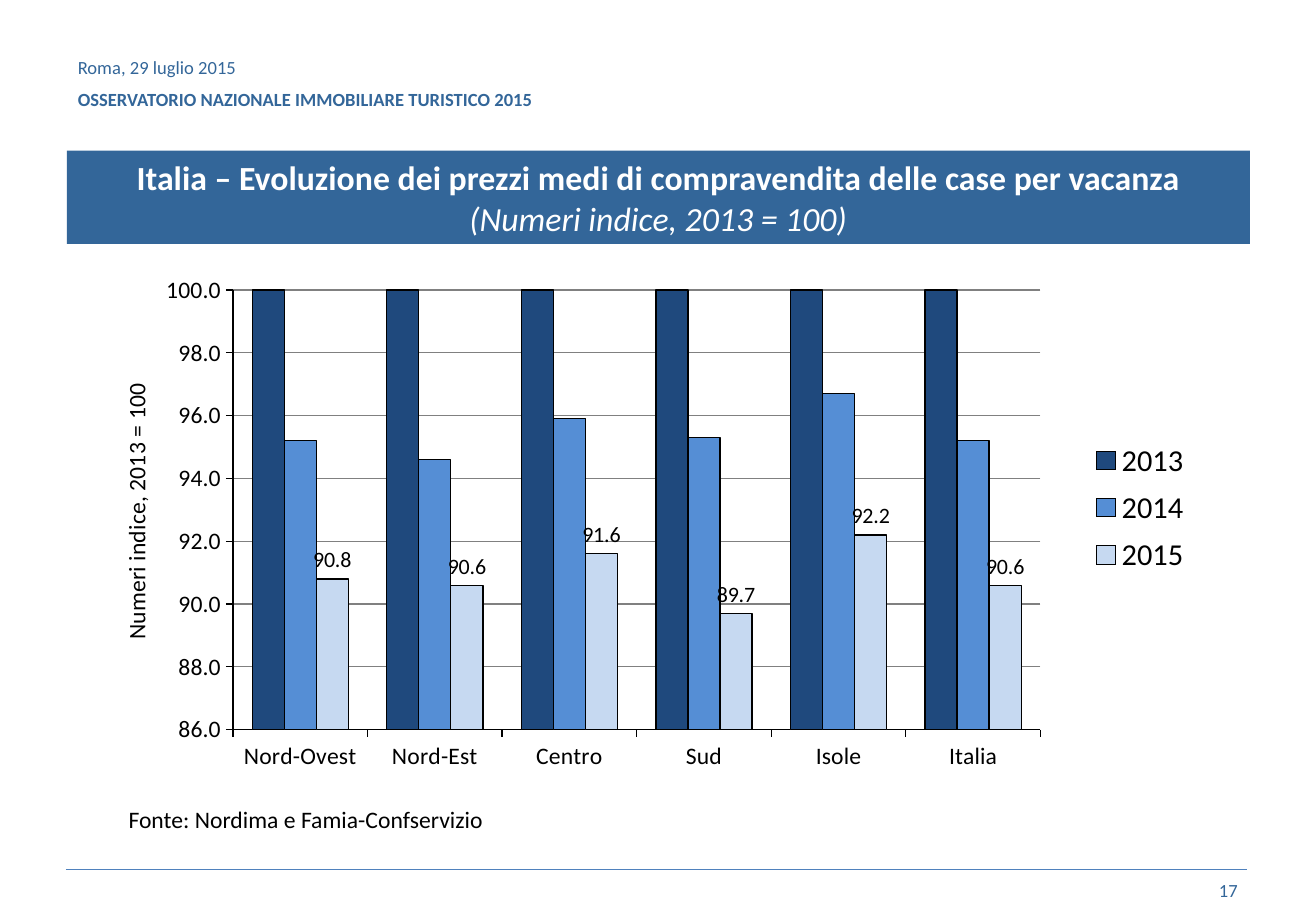
import pptx
import pptx.chart.data
import pptx.dml.color
import pptx.enum.chart
import pptx.enum.shapes
import pptx.enum.text
import pptx.oxml
import pptx.oxml.ns
import pptx.util

Pt = pptx.util.Pt
qn = pptx.oxml.ns.qn
ALIGN = pptx.enum.text.PP_ALIGN
CHART = pptx.enum.chart

BLUE = "336699"
BLACK = "000000"
WHITE = "FFFFFF"
AREAS = ["Nord-Ovest", "Nord-Est", "Centro", "Sud", "Isole", "Italia"]
PRICE_INDEX = [
    ("2013", "1F497D", [100] * 6),
    ("2014", "558ED5", [95.2, 94.6, 95.9, 95.3, 96.7, 95.2]),
    ("2015", "C6D9F1", [90.8, 90.6, 91.6, 89.7, 92.2, 90.6]),
]


def rgb(value):
    return pptx.dml.color.RGBColor.from_string(value)


def set_line(line, color, width):
    line.color.rgb = rgb(color)
    line.width = Pt(width)


def set_layout(element, inner=False, **fractions):
    """Place a chart part by fractions of the chart area."""
    for old in element.findall(qn("c:layout")):
        element.remove(old)
    modes = {key + "Mode": "edge" for key in fractions if key in "xy"}
    settings = {"layoutTarget": "inner"} if inner else {}
    settings.update(modes)
    settings.update(fractions)
    items = "".join(f'<c:{key} val="{val}"/>' for key, val in settings.items())
    layout = pptx.oxml.parse_xml(
        f'<c:layout {pptx.oxml.ns.nsdecls("c")}><c:manualLayout>{items}'
        "</c:manualLayout></c:layout>")
    overlay = element.find(qn("c:overlay"))
    if overlay is None:
        element.insert(0, layout)
    else:
        overlay.addprevious(layout)


class SlideBuilder:
    def __init__(self, slide, font="Calibri"):
        self.s = slide
        self.font = font

    def style(self, font, size, color=BLACK, bold=False):
        font.name = self.font
        font.size = Pt(size)
        font.color.rgb = rgb(color)
        font.bold = bold

    def rule(self, x1, y1, x2, y2, color, width):
        line = self.s.shapes.add_connector(
            pptx.enum.shapes.MSO_CONNECTOR.STRAIGHT, Pt(x1), Pt(y1), Pt(x2), Pt(y2))
        set_line(line.line, color, width)
        pptx.oxml.ns  # namespace helpers
        line._element.spPr.append(
            pptx.oxml.parse_xml(f'<a:effectLst {pptx.oxml.ns.nsdecls("a")}/>'))

    def text(self, box, lines, size, color=BLACK, align=ALIGN.LEFT, middle=True):
        """Add a text box; lines holds (text, bold) pairs."""
        sp = self.s.shapes.add_textbox(*map(Pt, box))
        tf = sp.text_frame
        tf.word_wrap = True
        if middle:
            tf.vertical_anchor = pptx.enum.text.MSO_ANCHOR.MIDDLE
        for i, (content, bold) in enumerate(lines):
            p = tf.add_paragraph() if i else tf.paragraphs[0]
            p.text = content
            p.alignment = align
            if i:
                p.space_before = Pt(6)
            self.style(p.font, size, color, bold)

    def banner(self, box, title, subtitle):
        sp = self.s.shapes.add_shape(
            pptx.enum.shapes.MSO_SHAPE.RECTANGLE, *map(Pt, box))
        sp.shadow.inherit = False
        sp.fill.solid()
        sp.fill.fore_color.rgb = rgb(BLUE)
        sp.line.fill.background()
        tf = sp.text_frame
        tf.word_wrap = True
        tf.vertical_anchor = pptx.enum.text.MSO_ANCHOR.MIDDLE
        p = tf.paragraphs[0]
        p.alignment = ALIGN.CENTER
        r = p.add_run()
        r.text = title
        self.style(r.font, 20, WHITE, bold=True)
        p.add_line_break()
        r = p.add_run()
        r.text = subtitle
        self.style(r.font, 20, WHITE)
        r.font.italic = True

    def column_chart(self, box, categories, series, axis_title):
        data = pptx.chart.data.CategoryChartData(number_format="#,##0.0")
        data.categories = categories
        for name, _, values in series:
            data.add_series(name, values)
        chart = self.s.shapes.add_chart(
            CHART.XL_CHART_TYPE.COLUMN_CLUSTERED, *map(Pt, box), data).chart
        self.style(chart.font, 14)
        chart.has_title = False
        plot = chart.plots[0]
        plot.gap_width = 120
        plot.overlap = 0
        plot.vary_by_categories = False
        for ser, (_, color, _) in zip(plot.series, series):
            ser.format.fill.solid()
            ser.format.fill.fore_color.rgb = rgb(color)
            set_line(ser.format.line, BLACK, 0.75)
        self.value_labels(plot.series[-1])
        self.axes(chart, axis_title)
        chart.has_legend = True
        chart.legend.position = CHART.XL_LEGEND_POSITION.RIGHT
        chart.legend.include_in_layout = False
        self.style(chart.legend.font, 18)
        set_layout(chart.legend._element, x=0.88, y=0.34, w=0.11, h=0.29)
        set_layout(chart._chartSpace.chart.plotArea, inner=True,
                   x=0.116, y=0.071, w=0.729, h=0.836)

    def value_labels(self, ser):
        labels = ser.data_labels
        labels.show_value = True
        labels.number_format = "#,##0.0"
        labels.number_format_is_linked = False
        labels.position = CHART.XL_LABEL_POSITION.OUTSIDE_END
        self.style(labels.font, 13)

    def axes(self, chart, title):
        for axis in (chart.category_axis, chart.value_axis):
            axis.major_tick_mark = CHART.XL_TICK_MARK.OUTSIDE
            axis.minor_tick_mark = CHART.XL_TICK_MARK.NONE
            set_line(axis.format.line, BLACK, 0.75)
            self.style(axis.tick_labels.font, 14)
        axis = chart.value_axis
        axis.minimum_scale, axis.maximum_scale, axis.major_unit = 86, 100, 2
        axis.tick_labels.number_format = "#,##0.0"
        axis.tick_labels.number_format_is_linked = False
        axis.has_major_gridlines = True
        set_line(axis.major_gridlines.format.line, "808080", 0.75)
        p = axis.axis_title.text_frame.paragraphs[0]
        p.text = title
        self.style(p.font, 14)
        set_layout(axis.axis_title._element, x=0.01, y=0.24)


def main():
    prs = pptx.Presentation()
    prs.slide_width, prs.slide_height = Pt(780), Pt(540)
    b = SlideBuilder(prs.slides.add_slide(prs.slide_layouts[6]))
    b.rule(39, 515.5, 739, 515.5, "4F81BD", 0.25)
    b.text((39, 21.6, 578, 55.4),
           [("Roma, 29 luglio 2015", False),
            ("OSSERVATORIO NAZIONALE IMMOBILIARE TURISTICO 2015", True)], 11, BLUE)
    b.text((558.7, 513.4, 182, 28.8), [("17", False)], 11, BLUE, ALIGN.RIGHT)
    b.banner((39.6, 89.3, 701.3, 55.4),
             "Italia – Evoluzione dei prezzi medi di compravendita delle case per vacanza",
             "(Numeri indice, 2013 = 100)")
    b.text((69.1, 473.8, 308, 24.5),
           [("Fonte: Nordima e Famia-Confservizio", False)], 14, middle=False)
    b.column_chart((61.9, 149.8, 656.6, 311.8), AREAS, PRICE_INDEX,
                   "Numeri indice, 2013 = 100")
    prs.save("out.pptx")


if __name__ == "__main__":
    main()
